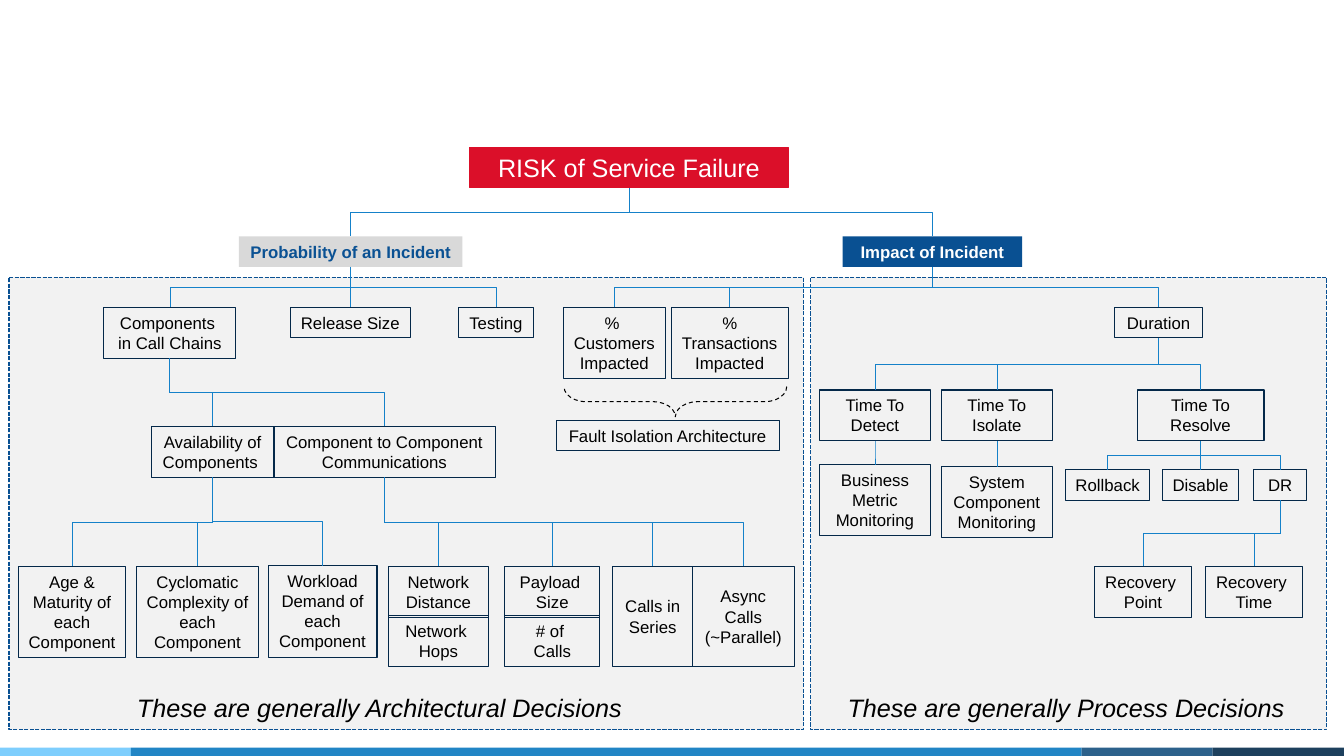
import copy
from functools import partial

from pptx import Presentation
from pptx.dml.color import RGBColor
from pptx.enum import dml, shapes, text
from pptx.oxml import ns, xmlchemy
from pptx.util import Pt

FONT = "Arial"
BLACK = RGBColor(0x00, 0x00, 0x00)
WHITE = RGBColor(0xFF, 0xFF, 0xFF)
NAVY = RGBColor(0x04, 0x28, 0x49)
BLUE = RGBColor(0x09, 0x50, 0x92)
HEADING_BLUE = RGBColor(0x0A, 0x51, 0x93)
LINK_BLUE = RGBColor(0x15, 0x81, 0xC9)
RED = RGBColor(0xDB, 0x0F, 0x29)
GREY = RGBColor(0xD9, 0xD9, 0xD9)
PALE_GREY = RGBColor(0xF2, 0xF2, 0xF2)
BAND_COLORS = (RGBColor(0x7E, 0xCE, 0xFD), RGBColor(0x21, 0x85, 0xC5),
               RGBColor(0x2C, 0x61, 0x8B), RGBColor(0x1D, 0x40, 0x5D))

SLIDE_BOX = (0, 0, 960, 540)
ARCHITECTURE_BOX = (6.4, 198, 567.4, 323.3)
PROCESS_BOX = (579, 198, 368.6, 323.3)
ONE_LINE, TWO_LINES, THREE_LINES, FOUR_LINES = 21.8, 36.4, 50.9, 65.4


def add_box(slide, area, x, y, width, height, fill=None, line=None, line_width=0.75,
            dash=None, kind=shapes.MSO_SHAPE.RECTANGLE):
    """Add a preset shape at x, y measured from the corner of area."""
    shape = slide.shapes.add_shape(
        kind, Pt(area[0] + x), Pt(area[1] + y), Pt(width), Pt(height))
    shape.shadow.inherit = False
    if fill is None:
        shape.fill.background()
    else:
        shape.fill.solid()
        shape.fill.fore_color.rgb = fill
    if line is None:
        shape.line.fill.background()
    else:
        shape.line.color.rgb = line
        shape.line.width = Pt(line_width)
        if dash is not None:
            shape.line.dash_style = dash
    return shape


def write_text(shape, content, size=12, color=BLACK, bold=False, italic=False,
               align=text.PP_ALIGN.CENTER, anchor=text.MSO_ANCHOR.TOP, wrap=True):
    """Fill a shape with text; \\v breaks a line and \\n starts a paragraph."""
    frame = shape.text_frame
    frame.text = content
    frame.word_wrap = wrap
    frame.vertical_anchor = anchor
    for paragraph in frame.paragraphs:
        paragraph.alignment = align
        for run in paragraph.runs:
            font = run.font
            font.name, font.size = FONT, Pt(size)
            font.bold, font.italic = bold, italic
            font.color.rgb = color
        for line_break in paragraph._p.findall(ns.qn("a:br")):
            properties = paragraph.runs[0]._r.find(ns.qn("a:rPr"))
            line_break.insert(0, copy.deepcopy(properties))


def add_node(slide, area, content, x, y, width, height=ONE_LINE,
             fill=None, line=NAVY, **text_format):
    shape = add_box(slide, area, x, y, width, height, fill, line)
    write_text(shape, content, **text_format)
    return shape


def connect(slide, parent, *children):
    """Run an elbow from the bottom of the parent to the top of each child."""
    for child in children:
        start_x = parent.left + parent.width // 2
        start_y = parent.top + parent.height
        end_x = child.left + child.width // 2
        center_x, center_y = (start_x + end_x) // 2, (start_y + child.top) // 2
        half_drop = (child.top - start_y) // 2
        half_span = abs(end_x - start_x) // 2
        rightward = end_x > start_x
        side = half_drop if rightward else -half_drop
        connector = slide.shapes.add_connector(
            shapes.MSO_CONNECTOR.ELBOW, center_x + side, center_y - half_span,
            center_x - side, center_y + half_span)
        connector.line.color.rgb = LINK_BLUE
        connector.line.width = Pt(0.5)
        properties = connector._element.spPr
        degrees = 270 if rightward else 90
        properties.find(ns.qn("a:xfrm")).set("rot", str(degrees * 60000))
        properties.append(xmlchemy.OxmlElement("a:effectLst"))


def add_bottom_band(slide, area):
    edges = (0, 93.6, 772.6, 866.2, area[2])
    for color, left, right in zip(BAND_COLORS, edges, edges[1:]):
        add_box(slide, area, left, area[3] - 6, right - left, 6, fill=color)


def add_panel(slide, area, caption, caption_x, caption_width):
    add_box(slide, area, 0, 0, area[2], area[3], PALE_GREY, BLUE, 1,
            dml.MSO_LINE.SQUARE_DOT)
    add_node(slide, area, caption, caption_x, 293, caption_width, 29, line=None,
             size=18, italic=True, align=text.PP_ALIGN.LEFT)


def add_headings(slide, area):
    """Add the root with its two branches and return the branches."""
    node = partial(add_node, slide, area)
    risk = node("RISK of Service Failure", 335.5, 105.1, 227.5, 29.1,
                fill=RED, line=RED, size=18, color=WHITE)
    probability = node("Probability of an Incident", 170.6, 168.8, 159.8, fill=GREY,
                       line=None, color=HEADING_BLUE, bold=True, wrap=False)
    impact = node("Impact of Incident", 601.9, 168.8, 128.2, fill=BLUE,
                  line=None, color=WHITE, bold=True)
    connect(slide, risk, probability, impact)
    return probability, impact


def add_architecture_tree(slide, area, probability, impact):
    node = partial(add_node, slide, area)
    top, middle, bottom = 21.6, 106.6, 206.6

    components = node("Components \vin Call Chains", 67.8, top, 94.3, TWO_LINES)
    release = node("Release Size", 201, top, 85.7, wrap=False)
    testing = node("Testing", 321.2, top, 53.3, wrap=False)
    connect(slide, probability, components, release, testing)

    customers = node("% \vCustomers\nImpacted", 396.1, top, 72.7, THREE_LINES, wrap=False)
    transactions = node("%\vTransactions \nImpacted", 473.1, top, 83.5, THREE_LINES)
    connect(slide, impact, customers, transactions)
    brace = add_box(slide, area, 465.2, 9.4, 21.6, 159.1, line=BLACK,
                    dash=dml.MSO_LINE.DASH, kind=shapes.MSO_SHAPE.RIGHT_BRACE)
    brace.rotation = 90
    brace.adjustments[0], brace.adjustments[1] = 0.73, 0.5
    node("Fault Isolation Architecture", 391, 102.2, 159.1, wrap=False)

    availability = node("Availability of Components ", 101.6, middle, 87.8, TWO_LINES)
    communications = node("Component to Component Communications",
                          188.7, middle, 159.1, TWO_LINES)
    connect(slide, components, availability, communications)

    connect(slide, availability,
            node("Age & Maturity of each Component", 6.6, bottom, 77, FOUR_LINES),
            node("Cyclomatic Complexity of each Component", 90.8, bottom, 87.8, FOUR_LINES),
            node("Workload Demand of each Component", 185.1, bottom - 0.6, 77.8, FOUR_LINES))

    pair_height = 71.3
    centered = {"anchor": text.MSO_ANCHOR.MIDDLE}
    connect(slide, communications,
            node("Network Distance", 270.8, bottom, 72, TWO_LINES),
            node("Payload \vSize", 354.3, bottom, 67.7, TWO_LINES),
            node("Calls in Series", 431.4, bottom, 56.9, pair_height, **centered),
            node("Async Calls (~Parallel)", 488.2, bottom, 72.7, pair_height, **centered))
    lower = bottom + pair_height - TWO_LINES
    node("Network \vHops", 270.8, lower, 72, TWO_LINES)
    node("# of \vCalls", 354.3, lower, 67.7, TWO_LINES)


def add_process_tree(slide, area, impact):
    node = partial(add_node, slide, area)
    duration = node("Duration", 217.3, 21.6, 62.6)
    connect(slide, impact, duration)

    detect = node("Time To Detect", 6.4, 80.6, 79.2, TWO_LINES)
    isolate = node("Time To Isolate", 93.5, 80.6, 79.2, TWO_LINES)
    resolve = node("Time To Resolve", 233.2, 80.6, 90.7, TWO_LINES)
    connect(slide, duration, detect, isolate, resolve)

    connect(slide, detect,
            node("Business Metric Monitoring", 6.4, 133.9, 79.2, THREE_LINES))
    connect(slide, isolate,
            node("System Component Monitoring", 93.5, 135.4, 79.2, THREE_LINES))

    recovery = node("DR", 316.7, 137.5, 37.4)
    connect(slide, resolve,
            node("Rollback", 182, 137.5, 60.5, wrap=False),
            node("Disable", 251.2, 137.5, 54.7, wrap=False),
            recovery)
    connect(slide, recovery,
            node("Recovery \vPoint", 202.9, 206.6, 69.1, TWO_LINES, wrap=False),
            node("Recovery \vTime", 282.1, 206.6, 69.1, TWO_LINES, wrap=False))


def main():
    presentation = Presentation()
    presentation.slide_width, presentation.slide_height = Pt(960), Pt(540)
    slide = presentation.slides.add_slide(presentation.slide_layouts[6])
    add_bottom_band(slide, SLIDE_BOX)
    add_panel(slide, PROCESS_BOX, "These are generally Process Decisions", 19.3, 360)
    add_panel(slide, ARCHITECTURE_BOX, "These are generally Architectural Decisions", 84.3, 480)
    probability, impact = add_headings(slide, SLIDE_BOX)
    add_architecture_tree(slide, ARCHITECTURE_BOX, probability, impact)
    add_process_tree(slide, PROCESS_BOX, impact)
    presentation.save("out.pptx")


if __name__ == "__main__":
    main()
